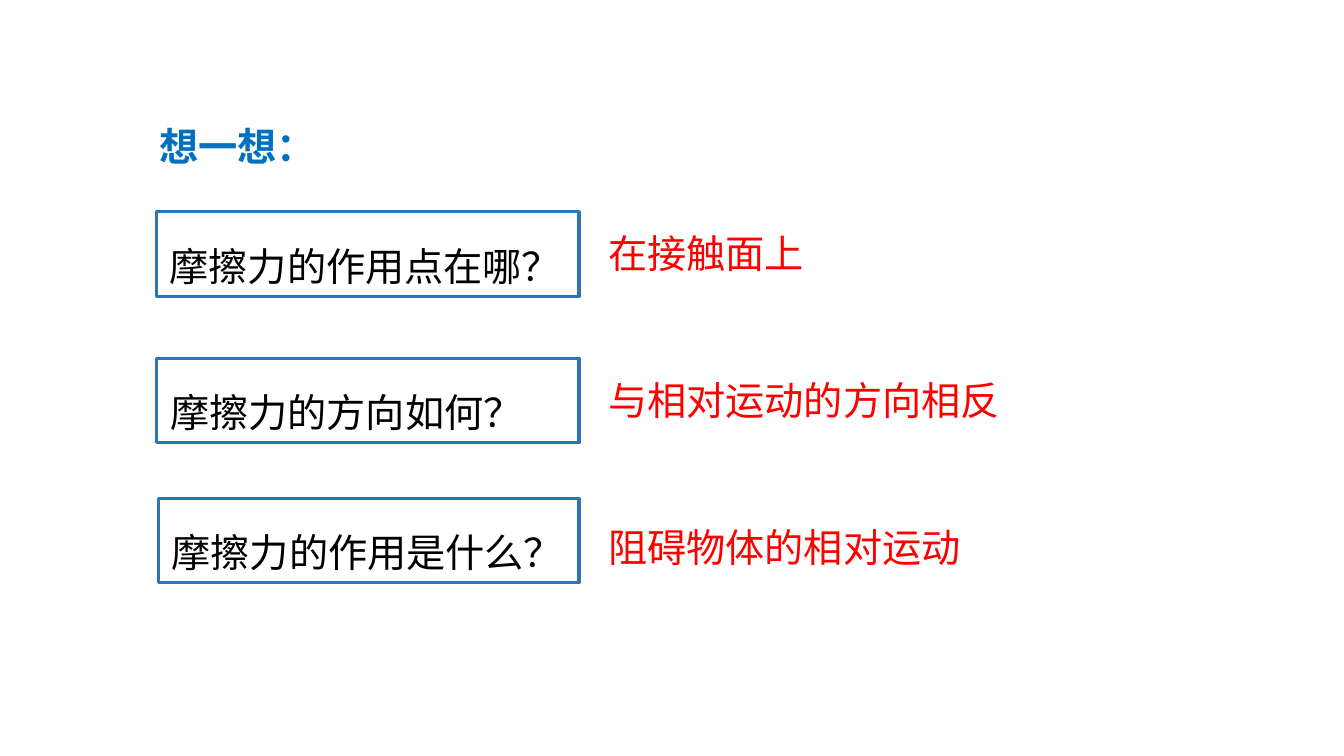
from dataclasses import dataclass

from lxml import etree
from pptx import Presentation
from pptx.dml.color import RGBColor
from pptx.enum import shapes, text
from pptx.oxml import ns
from pptx.util import Pt


@dataclass(frozen=True)
class Theme:
    font: str = "Noto Sans CJK SC"
    size: float = 28
    border_width: float = 2.25
    heading: RGBColor = RGBColor(0x00, 0x70, 0xC0)
    question: RGBColor = RGBColor(0x00, 0x00, 0x00)
    answer: RGBColor = RGBColor(0xFF, 0x00, 0x00)
    border: RGBColor = RGBColor(0x2E, 0x75, 0xB6)


THEME = Theme()
RIGHT_EDGE = 413.6
QUESTION_HEIGHT = 60.5
ANSWER_LEFT, ANSWER_TOP, ANSWER_PITCH = 424.8, 159.1, 104.8
LINE_HEIGHT = 43.9

# question, its left and top, answer, answer width
ROWS = [
    ("摩擦力的作用点在哪？", 111.6, 151.2, "在接触面上", 160.6),
    ("摩擦力的方向如何？", 112, 255.8, "与相对运动的方向相反", 310.3),
    ("摩擦力的作用是什么？", 113, 355.8, "阻碍物体的相对运动", 282.2),
]


def write(holder, wording, color, bold=False, wrap=True, spacing=None):
    """Put one styled line into a shape, set from its top left."""
    frame = holder.text_frame
    frame.text = wording
    frame.word_wrap = wrap
    frame.auto_size = text.MSO_AUTO_SIZE.SHAPE_TO_FIT_TEXT
    frame.vertical_anchor = text.MSO_ANCHOR.TOP
    frame.margin_left = frame.margin_right = Pt(9.6)
    frame.margin_top = frame.margin_bottom = Pt(4.8)
    paragraph = frame.paragraphs[0]
    paragraph.alignment = text.PP_ALIGN.LEFT
    paragraph.line_spacing = spacing
    run = paragraph.runs[0]
    run.font.size = Pt(THEME.size)
    run.font.bold = bold
    run.font.color.rgb = color
    run.font.name = THEME.font
    east_asian = etree.SubElement(run.font._element, ns.qn("a:ea"))
    east_asian.set("typeface", THEME.font)


def add_label(slide, wording, left, top, width, color, **style):
    label = slide.shapes.add_textbox(Pt(left), Pt(top), Pt(width), Pt(LINE_HEIGHT))
    write(label, wording, color, **style)


def add_question(slide, wording, left, top):
    box = slide.shapes.add_shape(
        shapes.MSO_SHAPE.RECTANGLE,
        Pt(left), Pt(top), Pt(RIGHT_EDGE - left), Pt(QUESTION_HEIGHT),
    )
    box.shadow.inherit = False
    box.fill.background()
    box.line.color.rgb = THEME.border
    box.line.width = Pt(THEME.border_width)
    write(box, wording, THEME.question, spacing=1.5)


def main():
    deck = Presentation()
    deck.slide_width, deck.slide_height = Pt(960), Pt(540)
    slide = deck.slides.add_slide(deck.slide_layouts[6])

    add_label(slide, "想一想：", 104.4, 82.8, 136, THEME.heading, bold=True)
    for index, (question, left, top, answer, width) in enumerate(ROWS):
        add_question(slide, question, left, top)
        answer_top = ANSWER_TOP + index * ANSWER_PITCH
        add_label(slide, answer, ANSWER_LEFT, answer_top, width, THEME.answer, wrap=False)

    deck.save("out.pptx")


if __name__ == "__main__":
    main()
